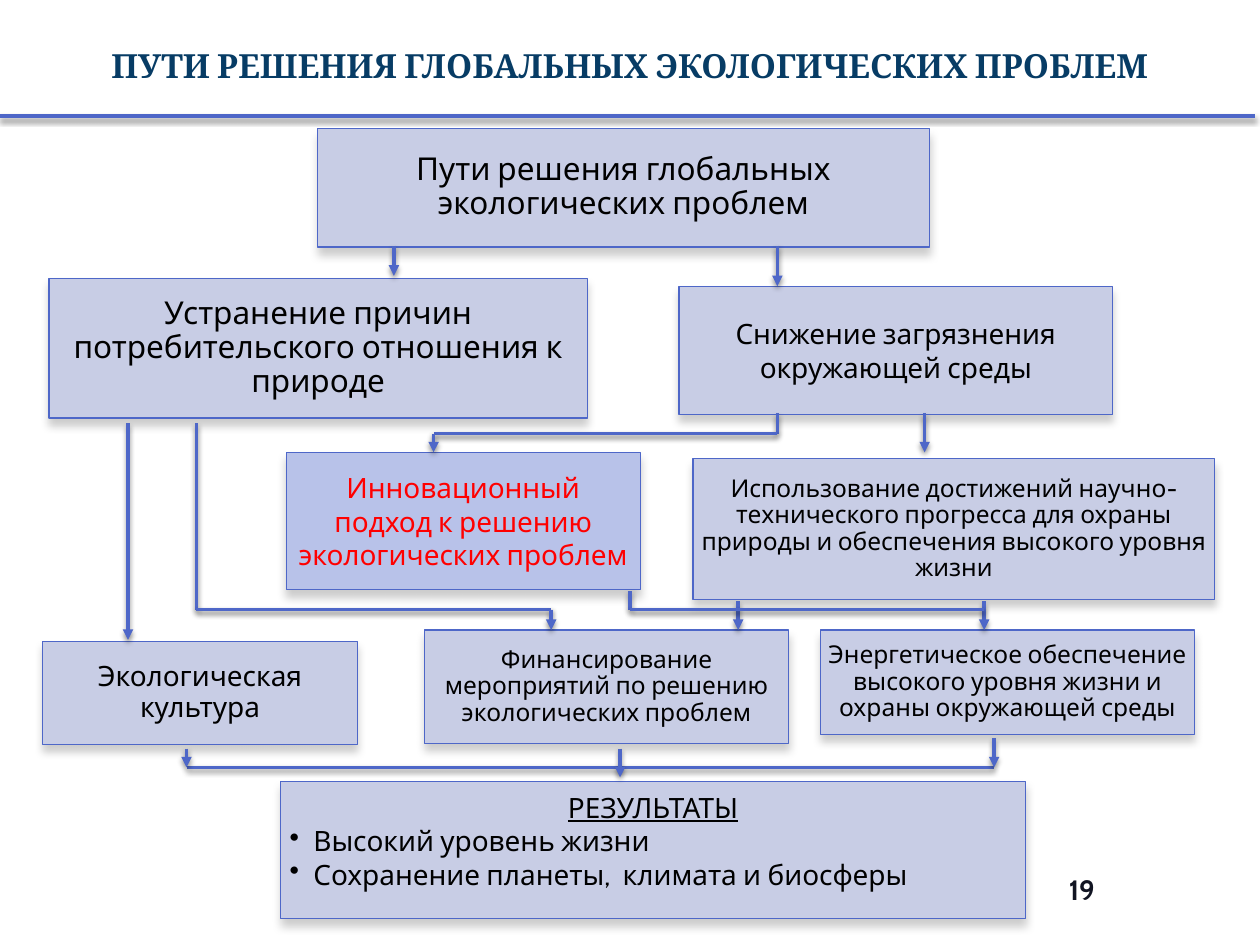
from itertools import pairwise

from lxml import etree
from pptx import Presentation
from pptx import util as u
from pptx.dml.color import RGBColor
from pptx.enum import shapes, text
from pptx.oxml import ns

COLORS = {"title": "073C65", "line": "4E67C8", "box": "C8CDE5", "accent": "B8C2E9",
          "text": "000000", "red": "FF0000", "number": "111422", "shadow": "000000"}


def write(para, words, size, font="Cabin", color="text", bold=False, underline=False,
          align=text.PP_ALIGN.CENTER, spacing=None):
    para.alignment = align
    para.line_spacing = spacing
    span = para.add_run()
    span.text = words
    span.font.name = font
    span.font.size = u.Pt(size)
    span.font.bold = bold
    span.font.underline = underline
    span.font.color.rgb = RGBColor.from_string(COLORS[color])


def add_shadow(item, opacity, blur, distance):
    props = item._element.spPr
    effects = props.find(ns.qn("a:effectLst"))
    if effects is None:
        effects = etree.SubElement(props, ns.qn("a:effectLst"))
    shadow = etree.SubElement(effects, ns.qn("a:outerShdw"), blurRad=str(u.Pt(blur)),
                              dist=str(u.Pt(distance)), dir="5400000", rotWithShape="0")
    tint = etree.SubElement(shadow, ns.qn("a:srgbClr"), val=COLORS["shadow"])
    etree.SubElement(tint, ns.qn("a:alpha"), val=str(opacity * 1000))


deck = Presentation()
deck.slide_width, deck.slide_height = u.Cm(25.4), u.Cm(19.05)
page = deck.slides.add_slide(deck.slide_layouts[5])

# Title
title = page.shapes.title
title.left, title.top, title.width, title.height = u.Cm(0), u.Cm(0), u.Cm(25.4), u.Cm(2.62)
title.text_frame.vertical_anchor = text.MSO_ANCHOR.MIDDLE
write(title.text_frame.paragraphs[0], "ПУТИ РЕШЕНИЯ ГЛОБАЛЬНЫХ ЭКОЛОГИЧЕСКИХ ПРОБЛЕМ", 19,
      font="Cambria", color="title", bold=True)

# Slide number
number = page.shapes.add_textbox(u.Cm(18.85), u.Cm(17.27), u.Cm(5.92), u.Cm(1.32))
number.text_frame.word_wrap = True
number.text_frame.vertical_anchor = text.MSO_ANCHOR.MIDDLE
write(number.text_frame.paragraphs[0], "19", 16, color="number", bold=True)

# Boxes: left, top, width, height, side inset, top inset, fill, words, format
boxes = [
    (6.4, 2.59, 12.34, 2.39, 0.18, 0.18, "box",
     "Пути решения глобальных экологических проблем", dict(size=18, spacing=0.9)),
    (13.97, 9.25, 10.52, 2.84, 0.15, 0.15, "box",
     "Использование достижений научно-технического прогресса для охраны природы "
     "и обеспечения высокого уровня жизни", dict(size=14, spacing=0.9)),
    (0.99, 5.61, 10.85, 2.82, 0.18, 0.18, "box",
     "Устранение причин потребительского отношения к природе", dict(size=18, spacing=0.9)),
    (0.86, 12.93, 6.35, 2.08, 0.18, 0.18, "box",
     "Экологическая культура", dict(size=16, spacing=0.9)),
    (8.56, 12.7, 7.34, 2.29, 0.15, 0.15, "box",
     "Финансирование мероприятий по решению экологических проблем",
     dict(size=14, spacing=0.9)),
    (16.54, 12.7, 7.54, 2.11, 0.15, 0.15, "box",
     "Энергетическое обеспечение высокого уровня жизни и охраны окружающей среды",
     dict(size=14, spacing=0.9)),
    (13.69, 5.77, 8.74, 2.59, 0.25, 0.13, "box",
     "Снижение загрязнения окружающей среды", dict(size=16)),
    (5.77, 9.12, 7.14, 2.77, 0.25, 0.13, "accent",
     "Инновационный подход к решению экологических проблем", dict(size=16, color="red")),
    (5.66, 15.75, 15.01, 2.77, 0.18, 0.18, "box",
     "РЕЗУЛЬТАТЫ", dict(size=16, underline=True)),
]
for left, top, width, height, side, edge, fill, words, style in boxes:
    box = page.shapes.add_shape(shapes.MSO_SHAPE.RECTANGLE,
                                u.Cm(left), u.Cm(top), u.Cm(width), u.Cm(height))
    box.fill.solid()
    box.fill.fore_color.rgb = RGBColor.from_string(COLORS[fill])
    box.line.color.rgb = RGBColor.from_string(COLORS["line"])
    box.line.width = u.Pt(0.75)
    box.shadow.inherit = False
    add_shadow(box, 20, 5, 4)
    frame = box.text_frame
    frame.word_wrap = True
    frame.vertical_anchor = text.MSO_ANCHOR.MIDDLE
    frame.margin_left = frame.margin_right = u.Cm(side)
    frame.margin_top = frame.margin_bottom = u.Cm(edge)
    write(frame.paragraphs[0], words, **style)

# Bulleted results in the last box
frame.vertical_anchor = text.MSO_ANCHOR.TOP
for words in ("Высокий уровень жизни", "Сохранение планеты,  климата и биосферы"):
    para = frame.add_paragraph()
    para.level = 1
    props = para._p.get_or_add_pPr()
    props.set("marL", str(u.Cm(0.48)))
    props.set("indent", str(-u.Cm(0.48)))
    etree.SubElement(props, ns.qn("a:buChar"), char="•")
    write(para, words, 16, align=text.PP_ALIGN.LEFT)

# Routes: points and whether the last stretch ends in an arrowhead
routes = [
    ([(7.94, 4.95), (7.94, 5.56)], True),
    ([(15.67, 4.95), (15.67, 5.77)], True),
    ([(2.58, 8.53), (2.58, 12.9)], True),
    ([(3.96, 8.53), (3.96, 12.29), (11.11, 12.29), (11.11, 12.7)], True),
    ([(18.64, 8.33), (18.64, 9.12)], True),
    ([(15.67, 8.33), (15.67, 8.74), (8.74, 8.74), (8.74, 9.12)], True),
    ([(14.88, 12.12), (14.88, 12.7)], True),
    ([(19.84, 12.12), (19.84, 12.7)], True),
    ([(12.7, 11.91), (12.7, 12.29), (19.84, 12.29)], False),
    ([(3.76, 15.47), (20.04, 15.47)], False),
    ([(3.76, 15.09), (3.76, 15.47)], True),
    ([(20.04, 14.88), (20.04, 15.47)], True),
    ([(12.5, 15.09), (12.5, 15.67)], True),
    ([(0, 2.34), (25.3, 2.34)], False),
]
for points, arrow in routes:
    for start, end in pairwise(points):
        line = page.shapes.add_connector(shapes.MSO_CONNECTOR.STRAIGHT,
                                         *map(u.Cm, start + end))
        line.line.color.rgb = RGBColor.from_string(COLORS["line"])
        line.line.width = u.Pt(2)
        add_shadow(line, 45, 3.1, 1.8)
    if arrow:
        outline = line._element.spPr.find(ns.qn("a:ln"))
        etree.SubElement(outline, ns.qn("a:tailEnd"), type="triangle")

deck.save("out.pptx")
